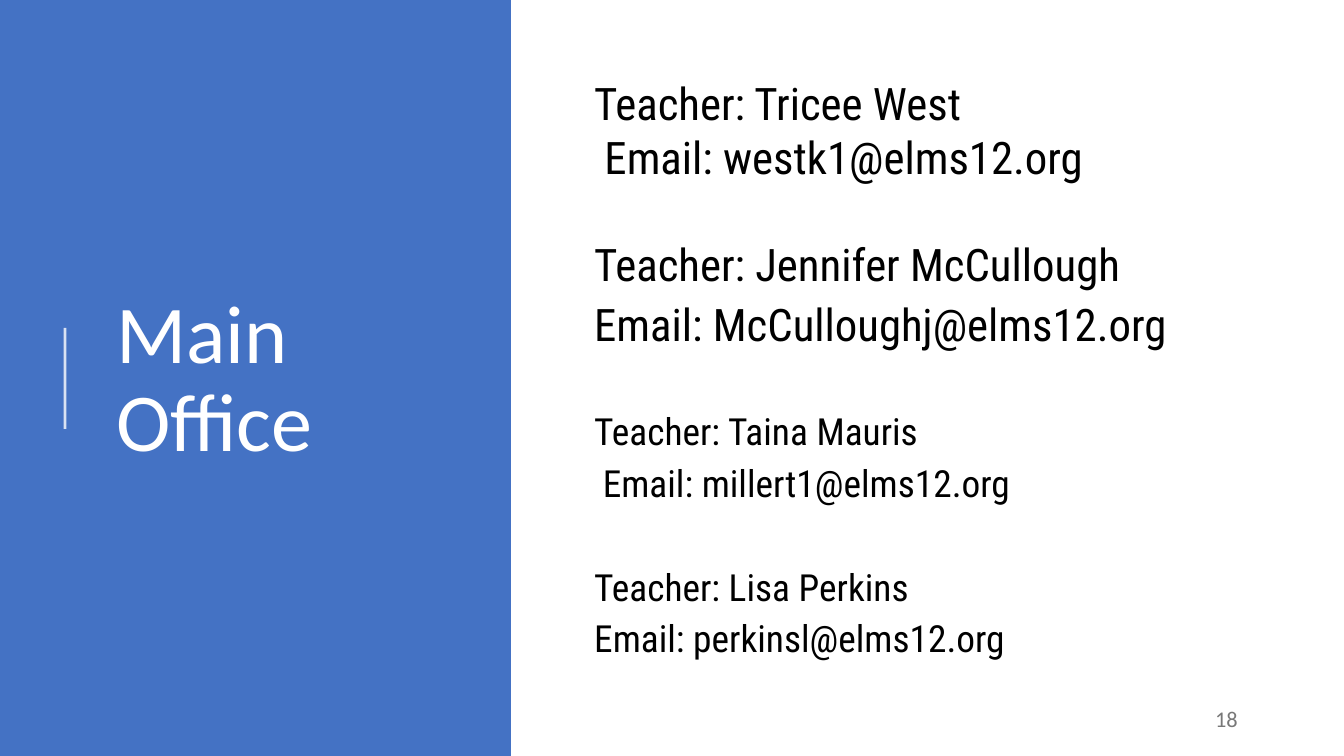
import pptx
import pptx.util
import pptx.dml.color
import pptx.enum.shapes
import pptx.enum.text
import pptx.oxml.ns
import lxml.etree

EMU_PER_PX = 914400 / 134.4
WIDTH, HEIGHT = 1344, 756
ALIGN = pptx.enum.text.PP_ALIGN
ANCHOR = pptx.enum.text.MSO_ANCHOR


def px(length):
    return pptx.util.Emu(round(length * EMU_PER_PX))


def paint(fill, color, opacity=100):
    """Give a fill a solid colour, see-through below 100 percent."""
    fill.solid()
    fill.fore_color.rgb = pptx.dml.color.RGBColor.from_string(color)
    if opacity < 100:
        tint = fill._xPr.find(".//" + pptx.oxml.ns.qn("a:srgbClr"))
        alpha = lxml.etree.SubElement(tint, pptx.oxml.ns.qn("a:alpha"))
        alpha.set("val", str(opacity * 1000))


class SlideBuilder:
    BLUE, WHITE, BLACK, GREY = "4472C4", "FFFFFF", "000000", "404040"
    HEADING_FONT, BODY_FONT = "Calibri", "Roboto Condensed"

    def __init__(self, page):
        self.page = page

    def panel(self, left, top, width, height, color):
        shape = self.page.shapes.add_shape(
            pptx.enum.shapes.MSO_SHAPE.RECTANGLE,
            px(left), px(top), px(width), px(height))
        shape.shadow.inherit = False
        paint(shape.fill, color)
        shape.line.fill.background()

    def rule(self, x1, y1, x2, y2, color, weight, opacity):
        line = self.page.shapes.add_connector(
            pptx.enum.shapes.MSO_CONNECTOR.STRAIGHT, px(x1), px(y1), px(x2), px(y2))
        line.line.width = pptx.util.Pt(weight)
        paint(line.line.fill, color, opacity)
        lxml.etree.SubElement(line._element.spPr, pptx.oxml.ns.qn("a:effectLst"))

    def text(self, left, top, width, height, lines, font, size, color, opacity=100,
             anchor=ANCHOR.TOP, align=ALIGN.LEFT, after=0):
        box = self.page.shapes.add_textbox(px(left), px(top), px(width), px(height))
        frame = box.text_frame
        frame.word_wrap = True
        frame.vertical_anchor = anchor
        frame.text = "\n".join(lines)
        for para in frame.paragraphs:
            para.alignment = align
            para.line_spacing = 0.9
            para.space_after = pptx.util.Pt(after)
            for span in para.runs:
                span.font.name = font
                span.font.size = pptx.util.Pt(size)
                paint(span.font.fill, color, opacity)
        return frame.paragraphs

    def contacts(self, top, height, people, size, gap):
        """List teachers and addresses, with a gap above each later teacher."""
        lines = [line for name, email in people
                 for line in (f"Teacher: {name}", f"{email}")]
        paras = self.text(581, top, 691, height, lines, self.BODY_FONT, size,
                          self.BLACK, after=6)
        for para in paras[2::2]:
            para.space_before = pptx.util.Pt(gap)
        return paras


def main():
    deck = pptx.Presentation()
    deck.slide_width, deck.slide_height = px(WIDTH), px(HEIGHT)
    slide = SlideBuilder(deck.slides.add_slide(deck.slide_layouts[6]))

    # Blue side panel with its accent line
    slide.panel(0, 0, 511, HEIGHT, slide.BLUE)
    slide.rule(65, 429, 65, 328, slide.WHITE, 1.5, 80)

    # Contact lists
    upper = slide.contacts(69, 328, [
        ("Tricee West", " Email: westk1@elms12.org"),
        ("Jennifer McCullough", "Email: McCulloughj@elms12.org")], 24, 32)
    for para in upper[:2]:
        para.line_spacing = 1.0
        para.space_after = pptx.util.Pt(0)
    slide.contacts(407, 274, [
        ("Taina Mauris", " Email: millert1@elms12.org"),
        ("Lisa Perkins", "Email: perkinsl@elms12.org")], 20, 28)

    # Title and page number
    slide.text(103, 78, 371, 606, ["Main Office"], slide.HEADING_FONT, 44,
               slide.WHITE, anchor=ANCHOR.MIDDLE)
    slide.text(949, 700, 302, 40, ["18"], slide.HEADING_FONT, 12, slide.GREY, 70,
               anchor=ANCHOR.MIDDLE, align=ALIGN.RIGHT, after=6)

    deck.save("out.pptx")


if __name__ == "__main__":
    main()
